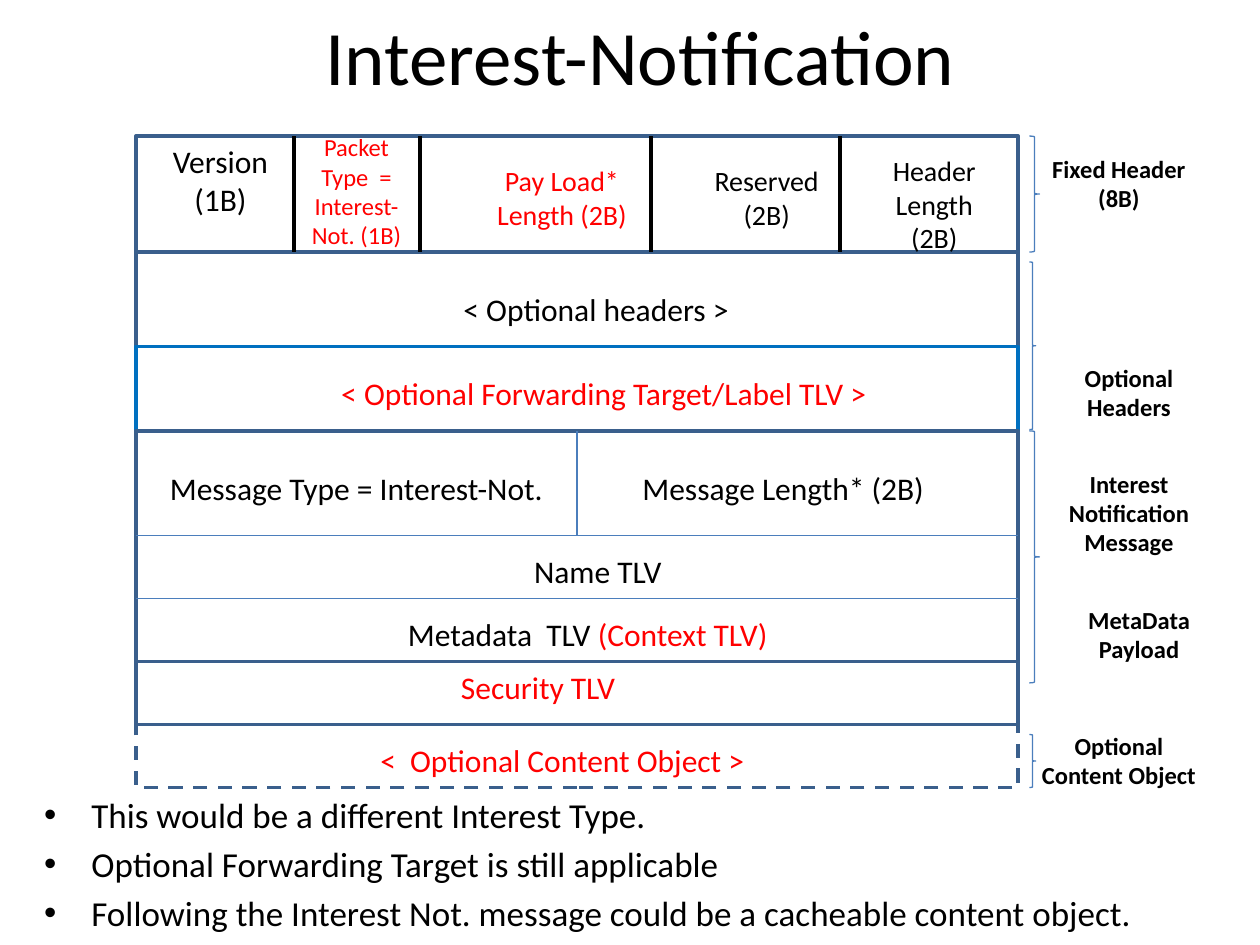
from dataclasses import dataclass

from lxml import etree
from pptx import Presentation
from pptx.dml.color import RGBColor
from pptx.enum.dml import MSO_LINE
from pptx.enum.shapes import MSO_CONNECTOR, MSO_SHAPE
from pptx.enum.text import MSO_ANCHOR, MSO_AUTO_SIZE, PP_ALIGN
from pptx.oxml.ns import qn
from pptx.util import Inches, Pt

RECT, BRACE = MSO_SHAPE.RECTANGLE, MSO_SHAPE.RIGHT_BRACE
STRAIGHT, DASH = MSO_CONNECTOR.STRAIGHT, MSO_LINE.DASH
LEFT, MID = PP_ALIGN.LEFT, PP_ALIGN.CENTER


@dataclass(frozen=True)
class Theme:
    font: str = "Calibri"
    black: RGBColor = RGBColor(0x00, 0x00, 0x00)
    red: RGBColor = RGBColor(0xFF, 0x00, 0x00)
    frame: RGBColor = RGBColor(0x3A, 0x5F, 0x8C)
    bright: RGBColor = RGBColor(0x00, 0x70, 0xC0)
    thin: RGBColor = RGBColor(0x4B, 0x7E, 0xBC)
    title: int = 44
    body: int = 20
    row: int = 18
    field: int = 16
    note: int = 14


theme = Theme()


def style(para, size, color=theme.black, bold=False):
    for run in para.runs:
        font = run.font
        font.name, font.size, font.bold = theme.font, Pt(size), bold
        font.color.rgb = color


def outline(kind, x, y, w, h, color, width):
    """Add an unfilled shape with a plain line."""
    shape = slide.shapes.add_shape(kind, Inches(x), Inches(y), Inches(w), Inches(h))
    shape.shadow.inherit = False
    shape.fill.background()
    shape.line.color.rgb = color
    shape.line.width = Pt(width)
    return shape


deck = Presentation()
deck.slide_width, deck.slide_height = Inches(10), Inches(7.5)
slide = deck.slides.add_slide(deck.slide_layouts[1])

# Title and list
title, body = slide.placeholders
title.left, title.top, title.width, title.height = map(Inches, (0.58, 0, 9, 0.87))
title.text_frame.text = "Interest-Notification"
title.text_frame.vertical_anchor = MSO_ANCHOR.MIDDLE
title.text_frame.paragraphs[0].alignment = MID
style(title.text_frame.paragraphs[0], theme.title)

body.left, body.top, body.width, body.height = map(Inches, (0.25, 6.25, 8.83, 1.25))
body.text_frame.text = "\n".join([
    "This would be a different Interest Type.",
    "Optional Forwarding Target is still applicable",
    "Following the Interest Not. message could be a cacheable content object.",
])
body.text_frame.auto_size = MSO_AUTO_SIZE.NONE
for para in body.text_frame.paragraphs:
    style(para, theme.body)
body.text_frame.paragraphs[0].space_before = Pt(0)

# Packet rows, stacked from the top down
left, wide, top = 1.08, 7, 1.08
right = left + wide
rows = [
    ("fixed", 0.92, theme.frame),
    ("headers", 0.75, theme.frame),
    ("target", 0.67, theme.bright),
    ("message", 1.83, theme.frame),
    ("security", 0.5, theme.frame),
    ("content", 0.5, theme.frame),
]
boxes = {}
y = top
for name, high, color in rows:
    boxes[name] = outline(RECT, left, y, wide, high, color, 2)
    y += high
boxes["content"].line.dash_style = DASH

# Dividers: field edges, then the lines within the message
edges = [(x, top, x, 2, theme.black, 2.25) for x in (2.33, 3.33, 5.17, 6.67)]
edges += [(left, y, right, y, theme.thin, 0.75) for y in (4.25, 4.75)]
edges.append((4.58, 3.42, 4.58, 4.25, theme.thin, 0.75))
for x1, y1, x2, y2, color, width in edges:
    line = slide.shapes.add_connector(
        STRAIGHT, Inches(x1), Inches(y1), Inches(x2), Inches(y2))
    line.line.color.rgb = color
    line.line.width = Pt(width)
    etree.SubElement(line._element.spPr, qn("a:effectLst"))
line.begin_connect(boxes["message"], 0)  # the last one splits the message row

# Braces beside the rows
for y, w, h in [(1.08, 0.08, 0.92), (2.08, 0.05, 1.33),
                (3.42, 0.08, 2), (5.83, 0.05, 0.42)]:
    outline(BRACE, 8.17, y, w, h, theme.thin, 0.75)

# Labels: place, size, align, then parts as (text, color)
black, red = theme.black, theme.red
labels = [
    (1.25, 1.08, 1, 0.71, theme.row, MID, [("Version (1B)", black)]),
    (2.33, 1, 1, 1.04, theme.note, MID,
     [("Packet Type  = Interest-Not. (1B)", red)]),
    (3.75, 1.25, 1.42, 0.64, theme.field, MID, [("Pay Load* Length (2B)", red)]),
    (5.5, 1.25, 1.17, 0.64, theme.field, MID, [("Reserved (2B)", black)]),
    (6.83, 1.17, 1.17, 0.91, theme.field, MID, [("Header Length (2B)", black)]),
    (3.58, 2.25, 2.75, 0.4, theme.row, LEFT, [("< Optional headers >", black)]),
    (2.61, 2.92, 4.72, 0.4, theme.row, LEFT,
     [("< Optional Forwarding Target/Label TLV >", red)]),
    (1.25, 3.67, 3.33, 0.4, theme.row, LEFT,
     [("Message Type = Interest-Not.", black)]),
    (5, 3.67, 2.75, 0.4, theme.row, LEFT, [("Message Length* (2B)", black)]),
    (3.83, 4.33, 1.83, 0.4, theme.row, MID, [("Name TLV", black)]),
    (1.83, 4.83, 5.67, 0.4, theme.row, MID,
     [("Metadata  TLV ", black), ("(Context TLV)", red)]),
    (3.56, 5.25, 2.52, 0.4, theme.row, LEFT, [("Security TLV", red)]),
    (2.92, 5.83, 3.5, 0.4, theme.row, LEFT,
     [("<  Optional Content Object >", red)]),
]
notes = [
    (8.17, 1.17, 0.57, "Fixed Header (8B)"),
    (8.25, 2.83, 0.57, "Optional Headers"),
    (8.25, 3.67, 0.81, "Interest Notification Message"),
    (8.33, 4.75, 0.57, "MetaData Payload"),
    (8.17, 5.75, 0.81, "Optional Content Object"),
]
labels += [(x, y, 1.42, h, theme.note, MID, [(text, black)])
           for x, y, h, text in notes]
for x, y, w, h, size, align, parts in labels:
    box = slide.shapes.add_textbox(Inches(x), Inches(y), Inches(w), Inches(h))
    frame = box.text_frame
    frame.word_wrap = True
    frame.auto_size = MSO_AUTO_SIZE.SHAPE_TO_FIT_TEXT
    para = frame.paragraphs[0]
    para.alignment = align
    for text, color in parts:
        para.add_run().text = text
    style(para, size, bold=x > right)
    for run, (text, color) in zip(para.runs, parts):
        run.font.color.rgb = color

deck.save("out.pptx")
